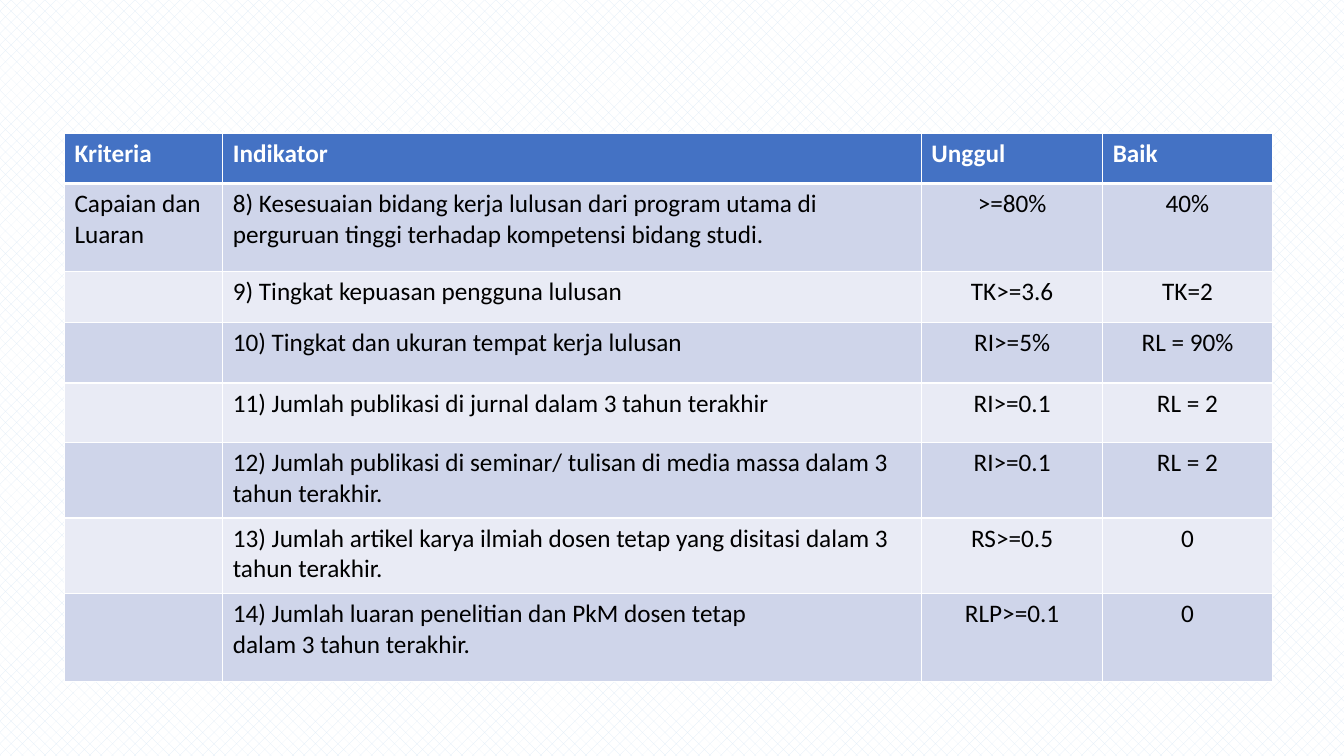
from dataclasses import dataclass

from lxml import etree
from pptx import Presentation
from pptx.dml.color import RGBColor
from pptx.enum.dml import MSO_PATTERN
from pptx.enum.text import PP_ALIGN
from pptx.oxml.ns import qn
from pptx.util import Inches, Pt

DOTTED = MSO_PATTERN.PERCENT_25
LEFT, CENTER = PP_ALIGN.LEFT, PP_ALIGN.CENTER


@dataclass(frozen=True)
class Theme:
    """Colours, font and line weights of the slide."""
    font: str = "Calibri"
    text_size: int = 18
    header_fill: str = "4472C4"
    header_text: str = "FFFFFF"
    body_text: str = "000000"
    bands: tuple = ("CFD5EA", "E9EBF5")
    border: str = "FFFFFF"
    thin: int = 1
    thick: int = 3
    pattern_front: str = "DEEBF7"
    pattern_back: str = "FFFFFF"


THEME = Theme()
SLIDE_WIDTH, SLIDE_HEIGHT = Inches(13.33), Inches(7.5)
TABLE_LEFT, TABLE_TOP = 4.8, 17.6
COLUMN_PERCENTS = (11.78, 51.98, 13.5, 12.6)
ROW_PERCENTS = (6.67, 11.6, 6.8, 8, 7.87, 10, 10, 11.6)
FIRST_CENTERED_COLUMN = 2
ROWS = (
    ("Kriteria", "Indikator", "Unggul", "Baik"),
    ("Capaian dan Luaran",
     "8) Kesesuaian bidang kerja lulusan dari program utama di "
     "perguruan tinggi terhadap kompetensi bidang studi.", ">=80%", "40%"),
    ("", "9) Tingkat kepuasan pengguna lulusan", "TK>=3.6", "TK=2"),
    ("", "10) Tingkat dan ukuran tempat kerja lulusan", "RI>=5%", "RL = 90%"),
    ("", "11) Jumlah publikasi di jurnal dalam 3 tahun terakhir",
     "RI>=0.1", "RL = 2"),
    ("", "12) Jumlah publikasi di seminar/ tulisan di media massa dalam 3 "
     "tahun terakhir.", "RI>=0.1", "RL = 2"),
    ("", "13) Jumlah artikel karya ilmiah dosen tetap yang disitasi dalam 3 "
     "tahun terakhir.", "RS>=0.5", "0"),
    ("", "14) Jumlah luaran penelitian dan PkM dosen tetap\n"
     "dalam 3 tahun terakhir.", "RLP>=0.1", "0"),
)


def across(percent):
    """Return a share of the slide's width."""
    return round(SLIDE_WIDTH * percent / 100)


def down(percent):
    """Return a share of the slide's height."""
    return round(SLIDE_HEIGHT * percent / 100)


def paint_background(slide):
    """Fill the slide with the pale pattern."""
    fill = slide.background.fill
    fill.patterned()
    fill.pattern = DOTTED
    fill.fore_color.rgb = RGBColor.from_string(THEME.pattern_front)
    fill.back_color.rgb = RGBColor.from_string(THEME.pattern_back)


def set_borders(cell, top, bottom):
    """Draw the four borders of a cell, with given top and bottom weights."""
    properties = cell._tc.get_or_add_tcPr()
    weights = {"a:lnL": THEME.thin, "a:lnR": THEME.thin,
               "a:lnT": top, "a:lnB": bottom}
    for position, (tag, weight) in enumerate(weights.items()):
        line = etree.Element(qn(tag), w=str(Pt(weight)))
        fill = etree.SubElement(line, qn("a:solidFill"))
        etree.SubElement(fill, qn("a:srgbClr"), val=THEME.border)
        properties.insert(position, line)


def write_cell(cell, text, color, bold, alignment):
    """Write the lines of a cell as separate paragraphs."""
    frame = cell.text_frame
    for index, line in enumerate(text.split("\n")):
        paragraph = frame.add_paragraph() if index else frame.paragraphs[0]
        paragraph.alignment = alignment
        paragraph.font.size = Pt(THEME.text_size)
        if line:
            run = paragraph.add_run()
            run.text = line
            run.font.name = THEME.font
            run.font.size = Pt(THEME.text_size)
            run.font.bold = bold
            run.font.color.rgb = RGBColor.from_string(color)


def style_cell(cell, row, column, text):
    """Fill, frame and write one cell by its place in the table."""
    header = row == 0
    fill = THEME.header_fill if header else THEME.bands[(row - 1) % 2]
    cell.fill.solid()
    cell.fill.fore_color.rgb = RGBColor.from_string(fill)
    set_borders(cell, THEME.thick if row == 1 else THEME.thin,
                THEME.thick if header else THEME.thin)
    centered = not header and column >= FIRST_CENTERED_COLUMN
    write_cell(cell, text, THEME.header_text if header else THEME.body_text,
               header, CENTER if centered else LEFT)


def add_criteria_table(slide):
    """Add the table of criteria and indicators."""
    frame = slide.shapes.add_table(
        len(ROWS), len(COLUMN_PERCENTS), across(TABLE_LEFT), down(TABLE_TOP),
        across(sum(COLUMN_PERCENTS)), down(sum(ROW_PERCENTS)))
    table = frame.table
    for column, percent in zip(table.columns, COLUMN_PERCENTS):
        column.width = across(percent)
    for row, percent in zip(table.rows, ROW_PERCENTS):
        row.height = down(percent)
    for row, texts in enumerate(ROWS):
        for column, text in enumerate(texts):
            style_cell(table.cell(row, column), row, column, text)


def main():
    """Build and save the presentation."""
    presentation = Presentation()
    presentation.slide_width = SLIDE_WIDTH
    presentation.slide_height = SLIDE_HEIGHT
    slide = presentation.slides.add_slide(presentation.slide_layouts[6])
    paint_background(slide)
    add_criteria_table(slide)
    presentation.save("out.pptx")


if __name__ == "__main__":
    main()
